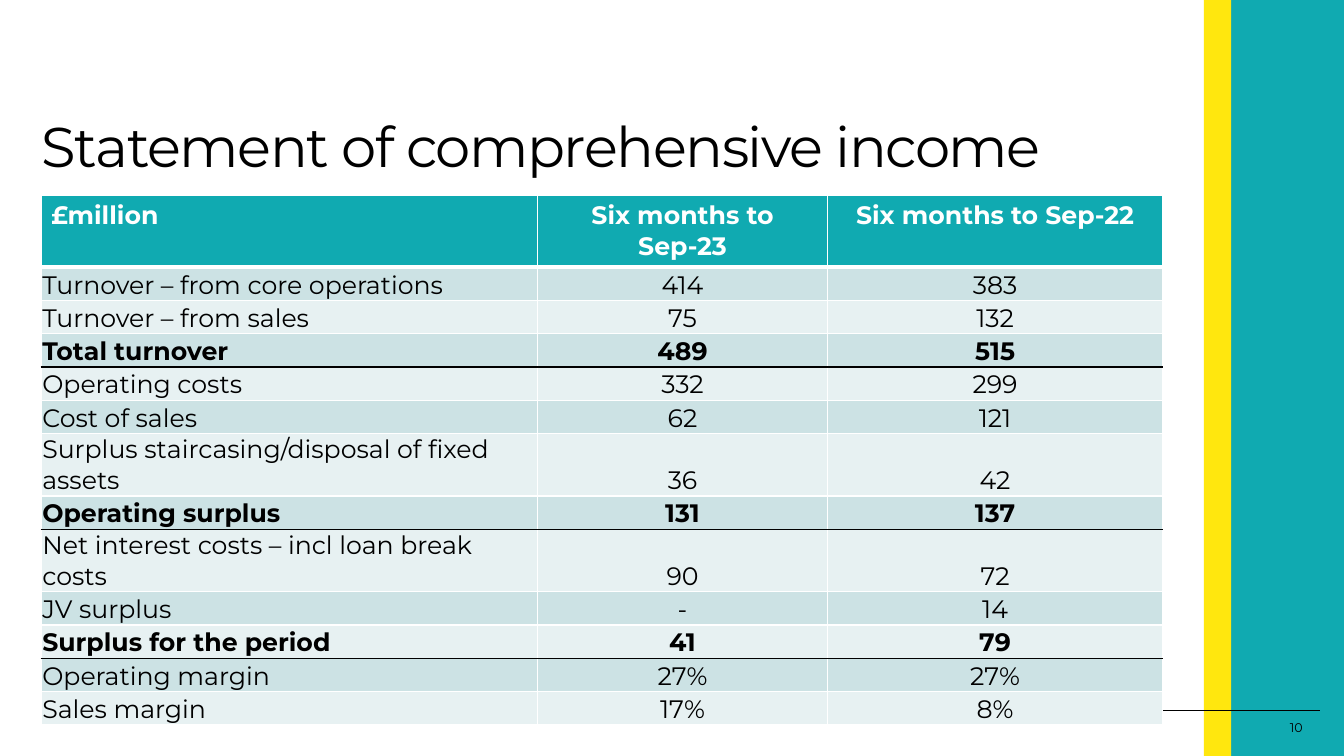
from dataclasses import dataclass

from lxml.etree import SubElement
from pptx import Presentation
from pptx.dml.color import RGBColor
from pptx.enum.shapes import MSO_CONNECTOR as Connector, MSO_SHAPE as Shape
from pptx.enum.text import MSO_ANCHOR as Anchor, MSO_AUTO_SIZE as AutoSize, PP_ALIGN as Align
from pptx.oxml.ns import qn
from pptx.util import Inches, Pt


@dataclass(frozen=True)
class Theme:
    font: str = "Montserrat"
    teal: str = "10AAB1"
    yellow: str = "FFE70E"
    ink: str = "000000"
    paper: str = "FFFFFF"
    band_dark: str = "CCE2E4"
    band_light: str = "E7F1F2"
    title_size: int = 40
    table_size: int = 18
    number_size: int = 9


THEME = Theme()

NO_INSETS = dict.fromkeys(("margin_left", "margin_top", "margin_right", "margin_bottom"), 0)
FRAME_FORMAT = {**NO_INSETS, "word_wrap": True, "auto_size": AutoSize.NONE,
                "vertical_anchor": Anchor.TOP}
BODY_CELL_FORMAT = {
    "margin_left": Inches(0.01),
    "margin_top": Inches(0.01),
    "margin_right": Inches(0.01),
    "margin_bottom": 0,
    "vertical_anchor": Anchor.BOTTOM,
}

HEADINGS = ("£million", "Six months to Sep-23", "Six months to Sep-22")
INCOME_LINES = (
    ("Turnover – from core operations", "414", "383"),
    ("Turnover – from sales", "75", "132"),
    ("Total turnover", "489", "515"),
    ("Operating costs", "332", "299"),
    ("Cost of sales", "62", "121"),
    ("Surplus staircasing/disposal of fixed assets", "36", "42"),
    ("Operating surplus", "131", "137"),
    ("Net interest costs – incl loan break costs", "90", "72"),
    ("JV surplus", "-", "14"),
    ("Surplus for the period", "41", "79"),
    ("Operating margin", "27%", "27%"),
    ("Sales margin", "17%", "8%"),
)
TOTALS = {"Total turnover", "Operating surplus", "Surplus for the period"}
COLUMN_WIDTHS = (4.92, 2.88, 3.32)
HEADING_HEIGHT, LINE_HEIGHT = 0.43, 0.33


def rgb(colour):
    return RGBColor.from_string(colour)


def apply_format(target, values):
    for attribute, value in values.items():
        setattr(target, attribute, value)


def write(frame, text, size, colour=THEME.ink, bold=False, align=Align.LEFT):
    paragraph = frame.paragraphs[0]
    paragraph.alignment = align
    run = paragraph.add_run()
    run.text = text
    apply_format(run.font, {"name": THEME.font, "size": Pt(size), "bold": bold})
    run.font.color.rgb = rgb(colour)
    return run


def add_band(slide, left, width, colour):
    band = slide.shapes.add_shape(
        Shape.RECTANGLE, Inches(left), 0, Inches(width), Inches(7.5))
    band.shadow.inherit = False
    band.fill.solid()
    band.fill.fore_color.rgb = rgb(colour)
    band.line.fill.background()


def add_footer_rule(slide):
    rule = slide.shapes.add_connector(
        Connector.STRAIGHT, Inches(13.09), Inches(7.05), Inches(0.41), Inches(7.05))
    rule.line.color.rgb = rgb(THEME.ink)
    rule.line.width = Pt(0.5)
    SubElement(rule._element.spPr, qn("a:effectLst"))


def add_page_number(slide, number):
    box = slide.shapes.add_textbox(Inches(12.5), Inches(7.14), Inches(0.42), Inches(0.19))
    apply_format(box.text_frame, FRAME_FORMAT)
    write(box.text_frame, number, THEME.number_size, align=Align.RIGHT)


def set_title(slide, text):
    title = slide.shapes.title
    apply_format(title, {"left": Inches(0.41), "top": Inches(1.19),
                         "width": Inches(11.51), "height": Inches(1.16)})
    apply_format(title.text_frame, FRAME_FORMAT)
    run = write(title.text_frame, text, THEME.title_size)
    run.font._element.set("spc", "-100")
    title.text_frame.paragraphs[0].line_spacing = 0.88


def set_border(cell, edge, colour, width=1):
    line = SubElement(cell._tc.get_or_add_tcPr(), qn(f"a:ln{edge}"), w=str(Pt(width)))
    fill = SubElement(line, qn("a:solidFill"))
    SubElement(fill, qn("a:srgbClr"), val=colour)


def rule_below(label):
    if label == HEADINGS[0]:
        return THEME.paper, 3
    return (THEME.ink if label in TOTALS else THEME.paper), 1


def format_cell(cell, fill, above, below):
    for edge in "LR":
        set_border(cell, edge, THEME.paper)
    set_border(cell, "T", *above)
    set_border(cell, "B", *below)
    cell.fill.solid()
    cell.fill.fore_color.rgb = rgb(fill)


def add_income_table(slide):
    lines = (HEADINGS, *INCOME_LINES)
    height = HEADING_HEIGHT + LINE_HEIGHT * len(INCOME_LINES)
    table = slide.shapes.add_table(
        len(lines), len(HEADINGS), Inches(0.41), Inches(1.94),
        Inches(sum(COLUMN_WIDTHS)), Inches(height)).table
    for column, width in zip(table.columns, COLUMN_WIDTHS):
        column.width = Inches(width)
    above = (THEME.paper, 1)
    for index, (row, line) in enumerate(zip(table.rows, lines)):
        heading = index == 0
        row.height = Inches(HEADING_HEIGHT if heading else LINE_HEIGHT)
        band = THEME.band_dark if index % 2 else THEME.band_light
        below = rule_below(line[0])
        for position, (cell, text) in enumerate(zip(row.cells, line)):
            format_cell(cell, THEME.teal if heading else band, above, below)
            if not heading:
                apply_format(cell, BODY_CELL_FORMAT)
            write(cell.text_frame, text, THEME.table_size,
                  THEME.paper if heading else THEME.ink,
                  heading or line[0] in TOTALS,
                  Align.CENTER if position else Align.LEFT)
        above = below


def main():
    deck = Presentation()
    apply_format(deck, {"slide_width": Inches(13.33), "slide_height": Inches(7.5)})
    slide = deck.slides.add_slide(deck.slide_layouts.get_by_name("Title Only"))
    add_band(slide, 12.21, 1.12, THEME.teal)
    add_band(slide, 11.94, 0.27, THEME.yellow)
    add_footer_rule(slide)
    add_page_number(slide, "10")
    set_title(slide, "Statement of comprehensive income")
    add_income_table(slide)
    deck.save("out.pptx")


if __name__ == "__main__":
    main()
